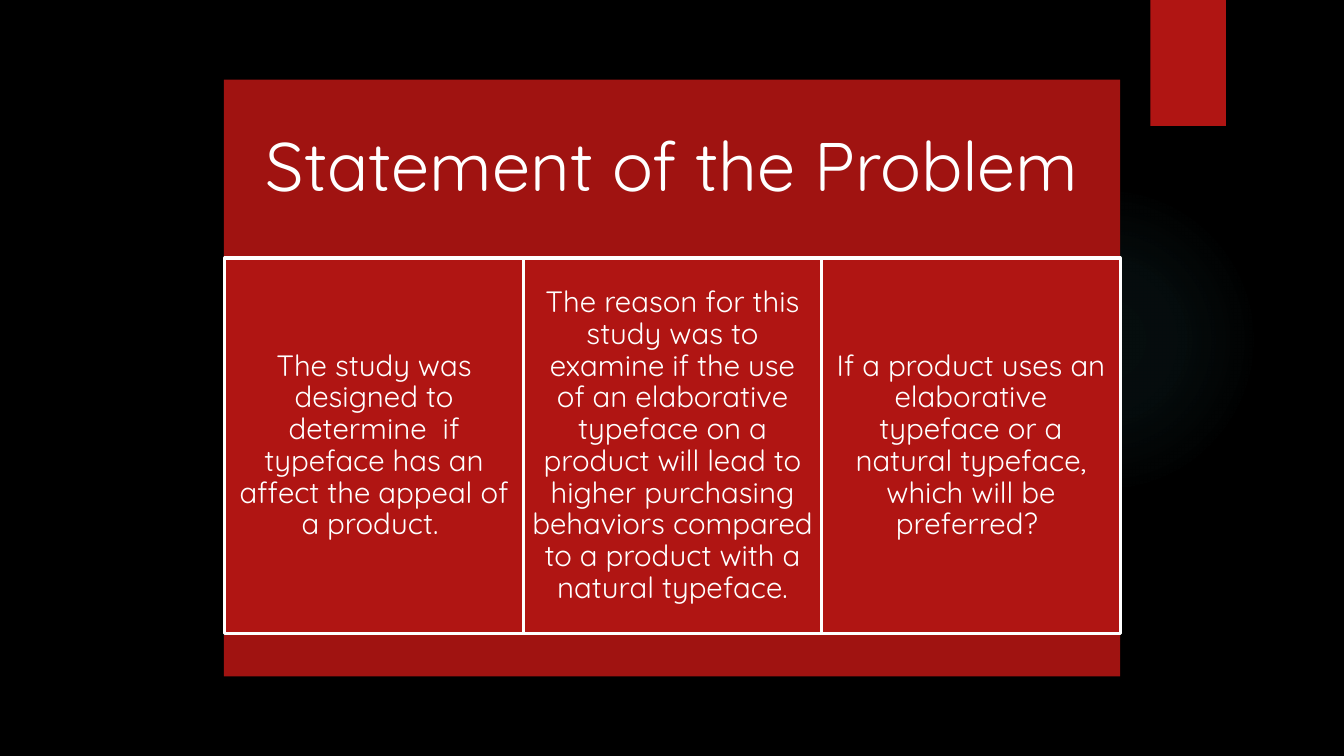
from dataclasses import dataclass

from pptx import Presentation
from pptx.dml.color import RGBColor
from pptx.enum.shapes import MSO_SHAPE as Preset
from pptx.enum.text import MSO_ANCHOR as Anchor, PP_ALIGN as Align
from pptx.oxml import parse_xml
from pptx.oxml.ns import nsdecls, qn
from pptx.shapes.autoshape import Shape
from pptx.slide import Slide
from pptx.util import Inches, Pt

BLACK = RGBColor(0x00, 0x00, 0x00)
WHITE = RGBColor(0xFF, 0xFF, 0xFF)
RED = RGBColor(0xB0, 0x15, 0x13)
DARK_RED = RGBColor(0xA0, 0x13, 0x11)
TEAL = RGBColor(0x50, 0xB9, 0xC1)
FONT = "Quicksand"

BOARD_LEFT, BOARD_WIDTH = 2.22, 8.89
PANEL_LEFT, PANEL_TOP = 2.23, 2.56
PANEL_WIDTH, PANEL_HEIGHT = 2.96, 3.73
GLOW_STOPS = ((0, 7), (36, 6), (69, 0))

STATEMENTS = (
    "The study was designed to determine  if typeface has an affect "
    "the appeal of a product. ",
    "The reason for this study was to examine if the use of an elaborative "
    "typeface on a product will lead to higher purchasing behaviors compared "
    "to a product with a natural typeface.",
    "If a product uses an elaborative typeface or a natural typeface, "
    "which will be preferred? ",
)


@dataclass(frozen=True)
class Block:
    left: float
    top: float
    width: float
    height: float
    color: RGBColor
    outlined: bool = False
    text: str = ""
    size: float = 21
    inset: float = 0.09


def write_text(shape: Shape, block: Block) -> None:
    frame = shape.text_frame
    frame.text = block.text
    frame.word_wrap = True
    frame.vertical_anchor = Anchor.MIDDLE
    frame.margin_left = frame.margin_right = Inches(block.inset)
    frame.margin_top = frame.margin_bottom = Inches(block.inset)
    paragraph = frame.paragraphs[0]
    paragraph.alignment = Align.CENTER
    paragraph.line_spacing = 0.9
    font = paragraph.runs[0].font
    font.name = FONT
    font.size = Pt(block.size)
    font.color.rgb = WHITE


def draw_block(slide: Slide, block: Block) -> None:
    shape = slide.shapes.add_shape(
        Preset.RECTANGLE, Inches(block.left), Inches(block.top),
        Inches(block.width), Inches(block.height))
    shape.shadow.inherit = False
    shape.fill.solid()
    shape.fill.fore_color.rgb = block.color
    if block.outlined:
        shape.line.color.rgb = WHITE
        shape.line.width = Pt(2.25)
    else:
        shape.line.fill.background()
    if block.text:
        write_text(shape, block)


def draw_glow(slide: Slide) -> None:
    """Draw a circle of light that fades out from its centre."""
    glow = slide.shapes.add_shape(
        Preset.OVAL, Inches(9.41), Inches(1.83), Inches(3.08), Inches(3.08))
    glow.shadow.inherit = False
    glow.line.fill.background()
    glow.fill.gradient()
    stops = "".join(
        f'<a:gs pos="{position * 1000}"><a:srgbClr val="{TEAL}">'
        f'<a:alpha val="{opacity * 1000}"/></a:srgbClr></a:gs>'
        for position, opacity in GLOW_STOPS)
    radial = parse_xml(
        f'<a:gradFill {nsdecls("a")} rotWithShape="1"><a:gsLst>{stops}</a:gsLst>'
        '<a:path path="circle"><a:fillToRect l="50000" t="50000" r="50000" '
        'b="50000"/></a:path></a:gradFill>')
    properties = glow.element.spPr
    properties.replace(properties.find(qn("a:gradFill")), radial)


def main() -> None:
    deck = Presentation()
    deck.slide_width, deck.slide_height = Inches(13.33), Inches(7.5)
    slide = deck.slides.add_slide(deck.slide_layouts[6])
    slide.background.fill.solid()
    slide.background.fill.fore_color.rgb = BLACK

    ribbon = Block(11.41, 0, 0.75, 1.25, RED)
    title = Block(BOARD_LEFT, 0.79, BOARD_WIDTH, 1.78, DARK_RED,
                  text="Statement of the Problem", size=49, inset=0.2)
    panels = [
        Block(PANEL_LEFT + column * PANEL_WIDTH, PANEL_TOP, PANEL_WIDTH,
              PANEL_HEIGHT, RED, outlined=True, text=statement)
        for column, statement in enumerate(STATEMENTS)
    ]
    footer = Block(BOARD_LEFT, 6.3, BOARD_WIDTH, 0.41, DARK_RED)

    draw_glow(slide)
    for block in (ribbon, title, *panels, footer):
        draw_block(slide, block)
    deck.save("out.pptx")


if __name__ == "__main__":
    main()
